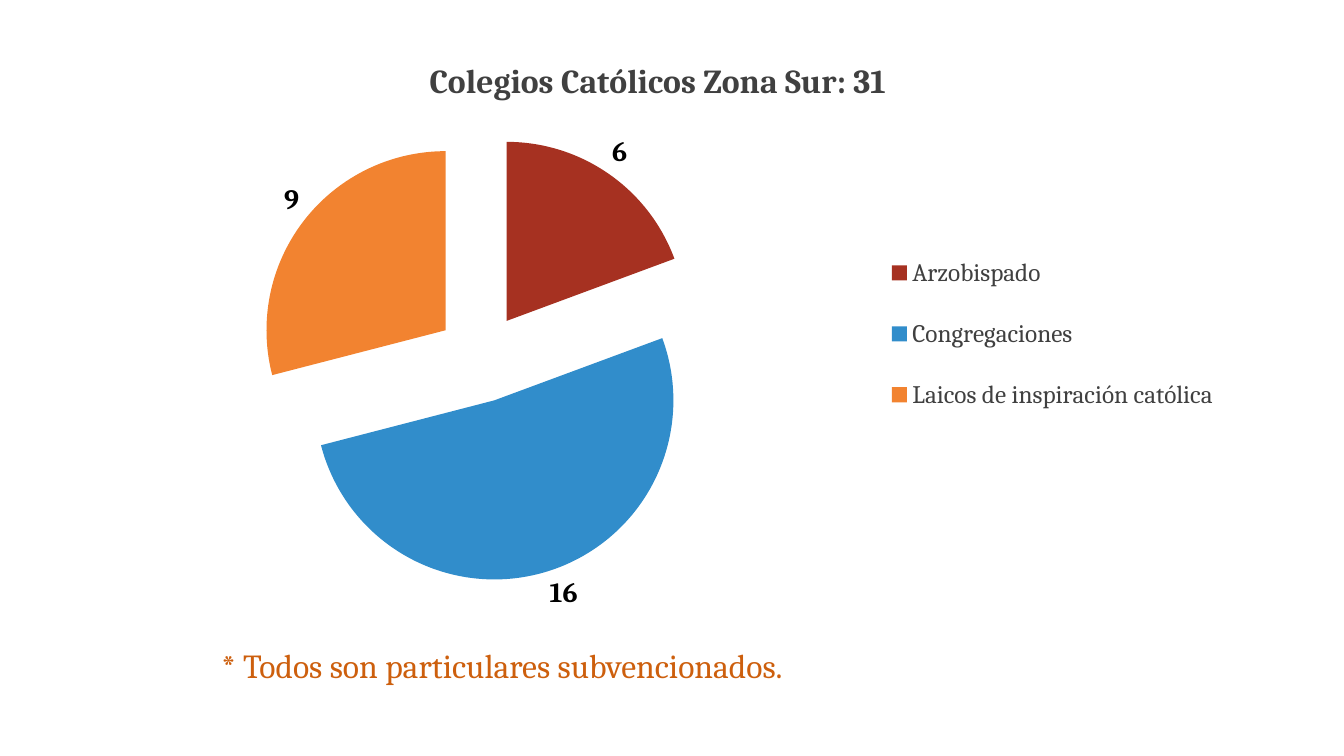
from lxml import etree
from pptx import Presentation
from pptx.chart.data import CategoryChartData
from pptx.dml.color import RGBColor
from pptx.enum.chart import XL_CHART_TYPE, XL_LABEL_POSITION, XL_LEGEND_POSITION
from pptx.oxml.ns import qn
from pptx.util import Cm, Pt

PIE = XL_CHART_TYPE.PIE
LEGEND_RIGHT = XL_LEGEND_POSITION.RIGHT
OUTSIDE_END = XL_LABEL_POSITION.OUTSIDE_END

TITLE = "Colegios Católicos Zona Sur: 31"
FOOTNOTE = "* Todos son particulares subvencionados."
SCHOOLS = [
    ("Arzobispado", 6, "red"),
    ("Congregaciones", 16, "blue"),
    ("Laicos de inspiración católica", 9, "orange"),
]
COLORS = {
    "red": "A63121",
    "blue": "318DCB",
    "orange": "F28330",
    "text": "404040",
    "label": "000000",
    "footnote": "CD5F0D",
}
FONT = "Cambria"
EXPLOSION = 25
# Shares of the chart frame: left, top, width, height
PIE_AREA = (0.16, 0.16, 0.38, 0.76)
LEGEND_AREA = (0.69, 0.32, 0.29, 0.36)


def style_font(font, size, color, bold=False):
    font.name = FONT
    font.size = Pt(size)
    font.bold = bold
    font.color.rgb = RGBColor.from_string(COLORS[color])


def add_manual_layout(layout, area, inner=False):
    """Fill a c:layout element with a position in shares of the chart."""
    manual = etree.SubElement(layout, qn("c:manualLayout"))
    settings = [("layoutTarget", "inner")] if inner else []
    settings += [("xMode", "edge"), ("yMode", "edge")]
    settings += zip("xywh", area)
    for tag, value in settings:
        etree.SubElement(manual, qn(f"c:{tag}")).set("val", str(value))


def add_school_chart(page):
    data = CategoryChartData()
    data.categories = [name for name, _, _ in SCHOOLS]
    data.add_series("Series 1", [count for _, count, _ in SCHOOLS])
    frame = page.shapes.add_chart(PIE, Cm(1.73), Cm(0.91), Cm(29.69), Cm(15.01), data)
    chart = frame.chart
    chart.font.name = "Arial"
    chart.font.size = Pt(18)

    chart.has_title = True
    title = chart.chart_title.text_frame
    title.text = TITLE
    style_font(title.paragraphs[0].runs[0].font, 24, "text", bold=True)

    chart.has_legend = True
    legend = chart.legend
    legend.position = LEGEND_RIGHT
    legend.include_in_layout = False
    style_font(legend.font, 18, "text")
    position = legend._element.find(qn("c:legendPos"))
    legend_layout = legend._element.find(qn("c:layout"))
    if legend_layout is None:
        legend_layout = etree.Element(qn("c:layout"))
        position.addnext(legend_layout)
    add_manual_layout(legend_layout, LEGEND_AREA)

    plot_area = chart._chartSpace.chart.plotArea
    plot_layout = plot_area.find(qn("c:layout"))
    if plot_layout is None:
        plot_layout = etree.Element(qn("c:layout"))
        plot_area.insert(0, plot_layout)
    add_manual_layout(plot_layout, PIE_AREA, inner=True)

    plot = chart.plots[0]
    plot.vary_by_categories = True
    series = plot.series[0]
    for index, (_, _, color) in enumerate(SCHOOLS):
        fill = series.points[index].format.fill
        fill.solid()
        fill.fore_color.rgb = RGBColor.from_string(COLORS[color])
    labels = series.data_labels
    labels.show_value = True
    labels.position = OUTSIDE_END
    style_font(labels.font, 20, "label", bold=True)

    explosion = etree.Element(qn("c:explosion"))
    explosion.set("val", str(EXPLOSION))
    series._element.find(qn("c:dPt")).addprevious(explosion)


def add_footnote(page):
    box = page.shapes.add_textbox(Cm(5.33), Cm(16.13), Cm(21.87), Cm(1.27))
    box.text_frame.word_wrap = True
    box.text_frame.text = FOOTNOTE
    style_font(box.text_frame.paragraphs[0].runs[0].font, 24, "footnote")


def main():
    deck = Presentation()
    deck.slide_width, deck.slide_height = Cm(33.87), Cm(19.05)
    blank_layout = deck.slide_layouts[6]
    page = deck.slides.add_slide(blank_layout)
    add_footnote(page)
    add_school_chart(page)
    deck.save("out.pptx")


if __name__ == "__main__":
    main()
